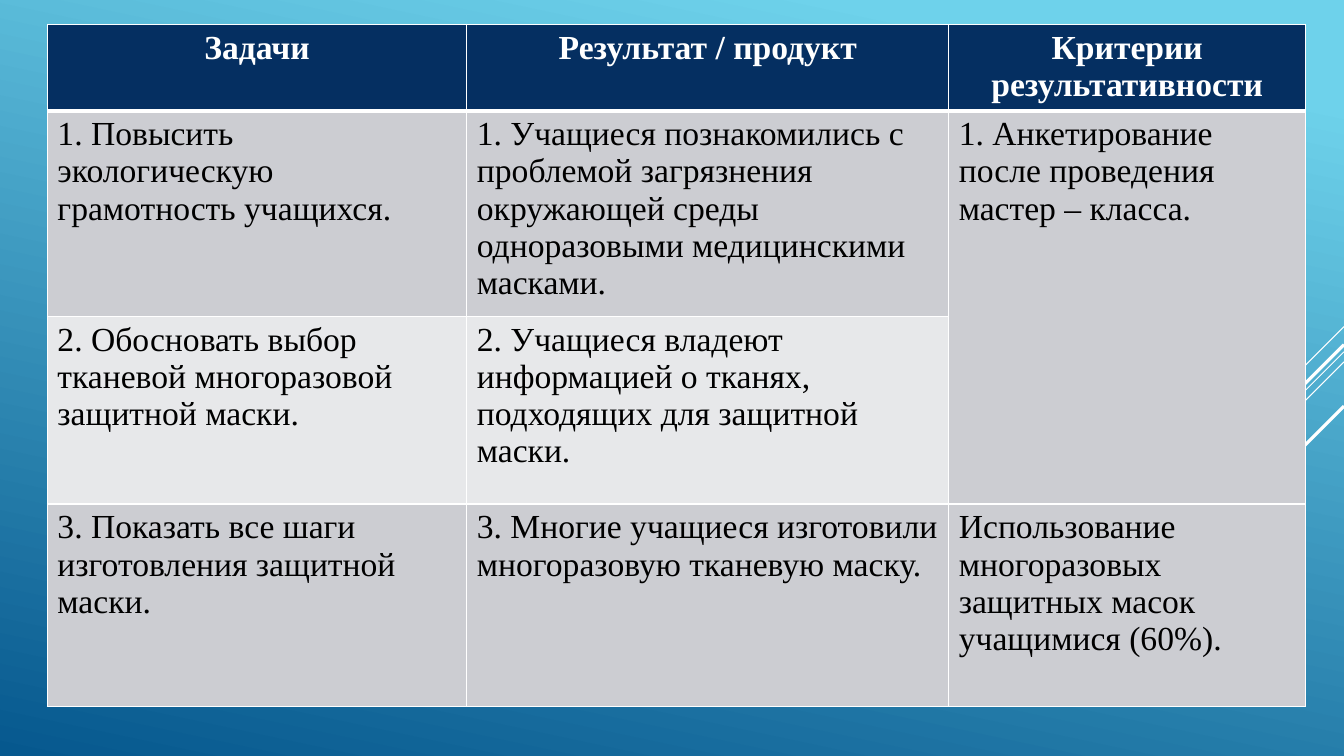
from lxml import etree
from pptx import Presentation
from pptx.dml.color import RGBColor
from pptx.enum.shapes import MSO_CONNECTOR
from pptx.enum.text import PP_ALIGN
from pptx.oxml.ns import qn
from pptx.util import Inches, Pt

LINE = MSO_CONNECTOR.STRAIGHT
LEFT, CENTER = PP_ALIGN.LEFT, PP_ALIGN.CENTER

# Content
HEAD = ["Задачи", "Результат / продукт", "Критерии результативности"]
BODY = [
    ["1. Повысить экологическую грамотность учащихся.",
     "1. Учащиеся познакомились с проблемой загрязнения окружающей среды "
     "одноразовыми медицинскими масками.",
     "1. Анкетирование после проведения мастер – класса."],
    ["2. Обосновать выбор тканевой многоразовой защитной маски.",
     "2. Учащиеся владеют информацией о тканях, подходящих для защитной маски.",
     ""],
    ["3. Показать все шаги изготовления защитной маски.",
     "3. Многие учащиеся изготовили многоразовую тканевую маску.",
     "Использование многоразовых защитных масок учащимися (60%)."],
]

# Layout and colours
WIDE, HIGH = 13.33, 7.5
X, Y = 0.47, 0.24
COLS = [4.16, 4.78, 3.54]
ROWS = [0.86, 2.04, 1.86, 2.01]
NAVY, WHITE, BLACK = "052F61", "FFFFFF", "000000"
BANDS = ["CCCDD2", "E7E8EA"]
SKY = [("6ED2EB", 0.1), ("06588E", 1)]
# Diagonals: height at the right edge, reach to the left, weight
RAYS = [(3.24, 1, 0.75), (3.49, 3.26, 0.75), (3.59, 2.07, 0.75),
        (3.42, 1.91, 2.25), (4.03, 1.39, 2.25)]


def color(code):
    return RGBColor.from_string(code)


def edge(cell, side, width):
    ln = etree.Element(qn("a:ln" + side), w=str(Pt(width)))
    fill = etree.SubElement(ln, qn("a:solidFill"))
    etree.SubElement(fill, qn("a:srgbClr"), val=WHITE)
    return ln


def paint(cell, text, fill, ink, bold, align, top, base):
    cell.fill.solid()
    cell.fill.fore_color.rgb = color(fill)
    props = cell._tc.get_or_add_tcPr()
    for i, (side, width) in enumerate(zip("LRTB", (1, 1, top, base))):
        props.insert(i, edge(cell, side, width))
    if not text:
        return
    para = cell.text_frame.paragraphs[0]
    para.alignment = align
    run = para.add_run()
    run.text = text
    look = {"name": "Times New Roman", "size": Pt(24), "bold": bold}
    for key, val in look.items():
        setattr(run.font, key, val)
    run.font.color.rgb = color(ink)


def main():
    deck = Presentation()
    deck.slide_width, deck.slide_height = Inches(WIDE), Inches(HIGH)
    slide = deck.slides.add_slide(deck.slide_layouts[6])

    # Background
    back = slide.background.fill
    back.gradient()
    back.gradient_angle = 360 - 102
    for stop, (code, place) in zip(back.gradient_stops, SKY):
        stop.color.rgb = color(code)
        stop.position = place

    # Diagonal rays, all at 45 degrees
    for y, reach, weight in RAYS:
        ends = [Inches(v) for v in (WIDE, y, WIDE - reach, y + reach)]
        ray = slide.shapes.add_connector(LINE, *ends)
        ray.line.color.rgb = color(WHITE)
        ray.line.width = Pt(weight)
        etree.SubElement(ray._element.spPr, qn("a:effectLst"))

    # Table
    box = [Inches(v) for v in (X, Y, sum(COLS), sum(ROWS))]
    table = slide.shapes.add_table(len(ROWS), len(COLS), *box).table
    for col, width in zip(table.columns, COLS):
        col.width = Inches(width)
    for row, height in zip(table.rows, ROWS):
        row.height = Inches(height)
    for c, text in enumerate(HEAD):
        paint(table.cell(0, c), text, NAVY, WHITE, True, CENTER, 1, 3)
    for r, line in enumerate(BODY):
        top = 1 if r else 3
        for c, text in enumerate(line):
            paint(table.cell(r + 1, c), text, BANDS[r % 2], BLACK, False,
                  LEFT, top, 1)
    table.cell(1, 2).merge(table.cell(2, 2))

    deck.save("out.pptx")


if __name__ == "__main__":
    main()
